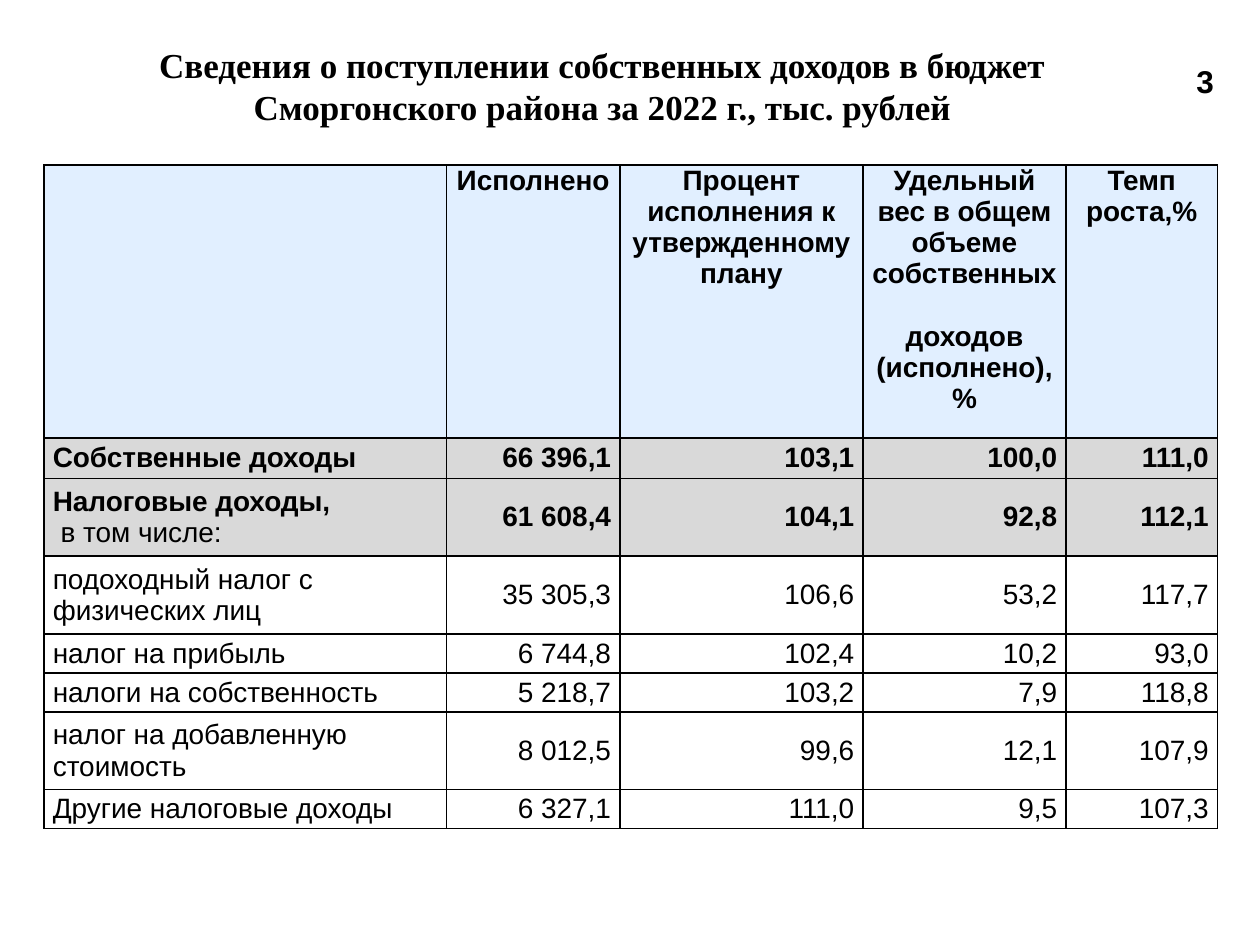
"""Build a slide with a table of the district budget's own revenues for 2022."""
from lxml.etree import SubElement
from pptx import Presentation
from pptx.dml.color import RGBColor
from pptx.enum.text import MSO_ANCHOR, PP_ALIGN
from pptx.oxml.ns import qn
from pptx.util import Pt

BLACK = RGBColor(0x00, 0x00, 0x00)
WHITE = RGBColor(0xFF, 0xFF, 0xFF)
HEADER_BLUE = RGBColor(0xE1, 0xEF, 0xFF)
TOTAL_GRAY = RGBColor(0xD9, 0xD9, 0xD9)

TITLE = "Сведения о поступлении собственных доходов в бюджет Сморгонского района за 2022 г., тыс. рублей"
PAGE_NUMBER = "3"
ROWS = [
    ("", "Исполнено", "Процент исполнения к утвержденному плану",
     "Удельный\nвес в общем объеме собственных\nдоходов (исполнено), %", "Темп роста,%"),
    ("Собственные доходы", "66 396,1", "103,1", "100,0", "111,0"),
    ("Налоговые доходы,\n в том числе:", "61 608,4", "104,1", "92,8", "112,1"),
    ("подоходный налог с физических лиц", "35 305,3", "106,6", "53,2", "117,7"),
    ("налог на прибыль", "6 744,8", "102,4", "10,2", "93,0"),
    ("налоги на собственность", "5 218,7", "103,2", "7,9", "118,8"),
    ("налог на добавленную стоимость", "8 012,5", "99,6", "12,1", "107,9"),
    ("Другие налоговые доходы", "6 327,1", "111,0", "9,5", "107,3"),
]
TOTAL_ROWS = (1, 2)
COLUMN_WIDTHS = [230, 99, 139, 116, 86.5]
ROW_HEIGHTS = [156, 23, 44.5, 44.5, 22.3, 22.3, 44.5, 22.3]
TABLE_LEFT, TABLE_TOP = 25.2, 94.3


def format_paragraph(paragraph, size, alignment, bold, font_name="Arial"):
    paragraph.alignment = alignment
    for run in paragraph.runs:
        run.font.name = font_name
        run.font.size = Pt(size)
        run.font.bold = bold
        run.font.color.rgb = BLACK


def add_text(slide, text, box, size, font_name):
    text_frame = slide.shapes.add_textbox(*map(Pt, box)).text_frame
    text_frame.word_wrap = True
    text_frame.vertical_anchor = MSO_ANCHOR.MIDDLE
    text_frame.text = text
    format_paragraph(text_frame.paragraphs[0], size, PP_ALIGN.CENTER, True, font_name)


def add_borders(cell):
    properties = cell._tc.get_or_add_tcPr()
    for index, side in enumerate(("lnL", "lnR", "lnT", "lnB")):
        line = properties.makeelement(qn(f"a:{side}"), {"w": str(Pt(1))})
        fill = SubElement(line, qn("a:solidFill"))
        SubElement(fill, qn("a:srgbClr"), val=str(BLACK))
        properties.insert(index, line)


def fill_cell(cell, text, row, column):
    is_header = row == 0
    is_total = row in TOTAL_ROWS
    cell.fill.solid()
    cell.fill.fore_color.rgb = HEADER_BLUE if is_header else TOTAL_GRAY if is_total else WHITE
    cell.margin_left = cell.margin_right = Pt(5)
    cell.margin_top = cell.margin_bottom = 0
    cell.vertical_anchor = MSO_ANCHOR.TOP if is_header else MSO_ANCHOR.MIDDLE
    add_borders(cell)
    if is_header:
        alignment = PP_ALIGN.CENTER
    else:
        alignment = PP_ALIGN.RIGHT if column else PP_ALIGN.LEFT
    cell.text_frame.text = text
    for index, paragraph in enumerate(cell.text_frame.paragraphs):
        is_subordinate = is_total and index > 0
        format_paragraph(paragraph, 16, alignment, (is_header or is_total) and not is_subordinate)
        if is_header and index == 2:
            paragraph.space_before = Pt(18)


def add_revenue_table(slide):
    table = slide.shapes.add_table(
        len(ROWS), len(COLUMN_WIDTHS), Pt(TABLE_LEFT), Pt(TABLE_TOP),
        Pt(sum(COLUMN_WIDTHS)), Pt(sum(ROW_HEIGHTS))).table
    for column, width in zip(table.columns, COLUMN_WIDTHS):
        column.width = Pt(width)
    for row, height in zip(table.rows, ROW_HEIGHTS):
        row.height = Pt(height)
    for row, texts in enumerate(ROWS):
        for column, text in enumerate(texts):
            fill_cell(table.cell(row, column), text, row, column)


def main():
    presentation = Presentation()
    presentation.slide_width, presentation.slide_height = Pt(720), Pt(540)
    slide = presentation.slides.add_slide(presentation.slide_layouts[6])
    add_text(slide, TITLE, (27.4, 26, 633.6, 45.4), 20, "Times New Roman")
    add_revenue_table(slide)
    add_text(slide, PAGE_NUMBER, (666, 31.7, 45.4, 28.8), 18, "Arial")
    presentation.save("out.pptx")


if __name__ == "__main__":
    main()
